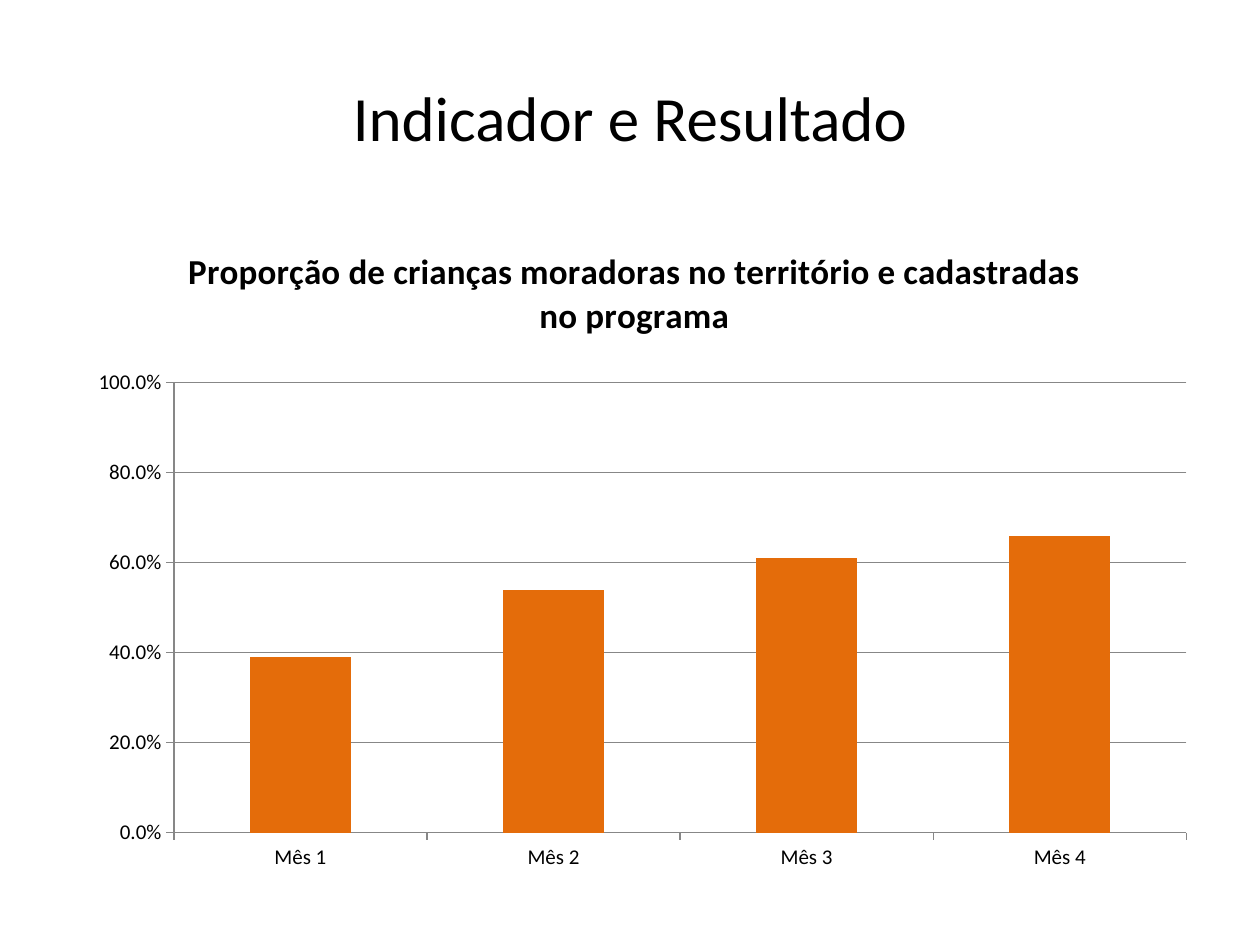
"""Build a slide with a column chart of children registered in the programme."""
from dataclasses import dataclass

import lxml.etree
import pptx
import pptx.chart.data
import pptx.dml.color
import pptx.enum.chart
import pptx.enum.text
import pptx.oxml
import pptx.oxml.ns
import pptx.util

Inches = pptx.util.Inches
FONT = "Calibri"
BLACK, ORANGE, GRAY = "000000", "E46C0A", "878787"
CHART_TITLE = "Proporção de crianças moradoras no território e cadastradas no programa"


@dataclass(frozen=True)
class Month:
    label: str
    share: float


MONTHS = [
    Month("Mês 1", 0.39),
    Month("Mês 2", 0.54),
    Month("Mês 3", 0.61),
    Month("Mês 4", 0.66),
]


def color(value: str) -> pptx.dml.color.RGBColor:
    return pptx.dml.color.RGBColor.from_string(value)


def style_font(font, size: float, bold: bool = False) -> None:
    font.name = FONT
    font.size = pptx.util.Pt(size)
    font.bold = bold
    font.color.rgb = color(BLACK)


def write_text(frame, text: str, *, size: float, bold: bool = False) -> None:
    paragraph = frame.paragraphs[0]
    paragraph.alignment = pptx.enum.text.PP_ALIGN.CENTER
    run = paragraph.add_run()
    run.text = text
    style_font(run.font, size, bold)


def style_line(line) -> None:
    line.color.rgb = color(GRAY)
    line.width = pptx.util.Pt(0.75)


def style_axis(axis) -> None:
    axis.major_tick_mark = pptx.enum.chart.XL_TICK_MARK.OUTSIDE
    axis.minor_tick_mark = pptx.enum.chart.XL_TICK_MARK.NONE
    style_font(axis.tick_labels.font, 12)
    style_line(axis.format.line)


def place_plot(chart, x: float, y: float, w: float, h: float) -> None:
    plot_area = chart.plots[0]._element.getparent()
    for old_layout in plot_area.findall(pptx.oxml.ns.qn("c:layout")):
        plot_area.remove(old_layout)
    layout = lxml.etree.Element(pptx.oxml.ns.qn("c:layout"))
    manual = lxml.etree.SubElement(layout, pptx.oxml.ns.qn("c:manualLayout"))
    settings = {"layoutTarget": "inner", "xMode": "edge", "yMode": "edge",
                "x": x, "y": y, "w": w, "h": h}
    for name, value in settings.items():
        lxml.etree.SubElement(manual, pptx.oxml.ns.qn(f"c:{name}"), val=str(value))
    plot_area.insert(0, layout)


def add_month_chart(slide, months: list[Month]) -> None:
    data = pptx.chart.data.CategoryChartData(number_format="0.0%")
    data.categories = [month.label for month in months]
    data.add_series(CHART_TITLE, [month.share for month in months])
    chart = slide.shapes.add_chart(
        pptx.enum.chart.XL_CHART_TYPE.COLUMN_CLUSTERED,
        Inches(0.5), Inches(1.75), Inches(9.07), Inches(5.23), data,
    ).chart
    style_font(chart.font, 10)
    chart.has_legend = False
    chart.has_title = True
    write_text(chart.chart_title.text_frame, CHART_TITLE, size=20, bold=True)
    chart.chart_title.include_in_layout = False

    plot = chart.plots[0]
    plot.vary_by_categories = False
    plot.gap_width = 150
    fill = plot.series[0].format.fill
    fill.solid()
    fill.fore_color.rgb = color(ORANGE)

    style_axis(chart.category_axis)
    value_axis = chart.value_axis
    style_axis(value_axis)
    value_axis.minimum_scale, value_axis.maximum_scale = 0, 1
    value_axis.major_unit = 0.2
    value_axis.has_major_gridlines = True
    style_line(value_axis.major_gridlines.format.line)
    value_axis.tick_labels.number_format = "0.0%"
    value_axis.tick_labels.number_format_is_linked = False
    place_plot(chart, 0.097, 0.246, 0.886, 0.683)


def main() -> None:
    presentation = pptx.Presentation()
    presentation.slide_width, presentation.slide_height = Inches(10), Inches(7.5)
    slide = presentation.slides.add_slide(presentation.slide_layouts[6])
    heading = slide.shapes.add_textbox(Inches(0.5), Inches(0.3), Inches(9), Inches(1.25))
    heading.text_frame.word_wrap = True
    heading.text_frame.vertical_anchor = pptx.enum.text.MSO_ANCHOR.MIDDLE
    write_text(heading.text_frame, "Indicador e Resultado", size=36)
    add_month_chart(slide, MONTHS)
    presentation.save("out.pptx")


if __name__ == "__main__":
    main()
